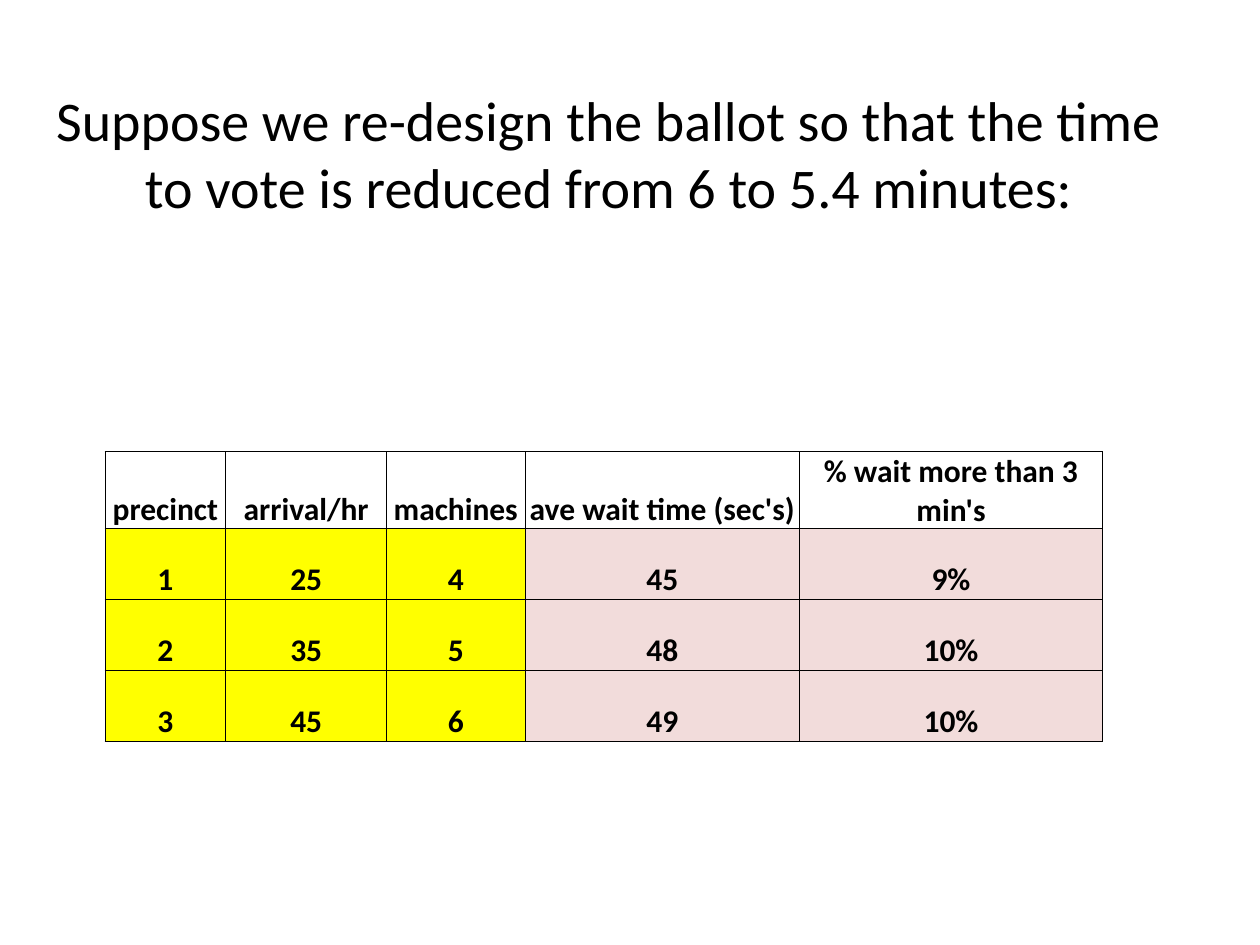
from lxml import etree
from pptx import Presentation
from pptx.dml.color import RGBColor
from pptx.enum import text
from pptx.oxml import ns
from pptx.util import Pt

TITLE = "Suppose we re-design the ballot so that the time to vote is reduced from 6 to 5.4 minutes:"
HEADERS = ["precinct", "arrival/hr", "machines", "ave wait time (sec's)", "% wait more than 3 min's"]
PRECINCTS = [
    ["1", "25", "4", "45", "9%"],
    ["2", "35", "5", "48", "10%"],
    ["3", "45", "6", "49", "10%"],
]
INPUT_COLUMNS = 3
COLUMN_WIDTHS = [69, 92, 79, 157, 173]
ROW_HEIGHT = 40.5
COLORS = {"ink": "000000", "input": "FFFF00", "result": "F2DCDB"}
FONT = "Calibri"


def write(frame, words, size, bold=False):
    para = frame.paragraphs[0]
    para.alignment = text.PP_ALIGN.CENTER
    span = para.add_run()
    span.text = words
    span.font.name = FONT
    span.font.size = Pt(size)
    span.font.bold = bold
    span.font.color.rgb = RGBColor.from_string(COLORS["ink"])


def add_borders(cell, width=0.5):
    properties = cell._tc.get_or_add_tcPr()
    for side in ("a:lnL", "a:lnR", "a:lnT", "a:lnB"):
        line = etree.SubElement(properties, ns.qn(side), w=str(Pt(width)))
        fill = etree.SubElement(line, ns.qn("a:solidFill"))
        etree.SubElement(fill, ns.qn("a:srgbClr"), val=COLORS["ink"])


def style_cell(cell, fill_color):
    cell.vertical_anchor = text.MSO_ANCHOR.BOTTOM
    cell.margin_left = cell.margin_right = cell.margin_top = Pt(0.75)
    cell.margin_bottom = 0
    add_borders(cell)
    if fill_color:
        cell.fill.solid()
        cell.fill.fore_color.rgb = RGBColor.from_string(fill_color)
    else:
        cell.fill.background()


deck = Presentation()
deck.slide_width, deck.slide_height = Pt(720), Pt(540)
page = deck.slides.add_slide(deck.slide_layouts[6])

title = page.shapes.add_textbox(Pt(24), Pt(42), Pt(648), Pt(90))
title.text_frame.word_wrap = True
title.text_frame.vertical_anchor = text.MSO_ANCHOR.MIDDLE
write(title.text_frame, TITLE, 32)

rows = [HEADERS] + PRECINCTS
table = page.shapes.add_table(
    len(rows), len(HEADERS), Pt(60), Pt(258),
    Pt(sum(COLUMN_WIDTHS)), Pt(ROW_HEIGHT * len(rows)),
).table
table.first_row = table.horz_banding = False
for column, width in zip(table.columns, COLUMN_WIDTHS):
    column.width = Pt(width)
for r, values in enumerate(rows):
    table.rows[r].height = Pt(ROW_HEIGHT)
    for c, value in enumerate(values):
        cell = table.cell(r, c)
        body_color = COLORS["input" if c < INPUT_COLUMNS else "result"]
        style_cell(cell, body_color if r else None)
        write(cell.text_frame, value, 18, bold=True)

deck.save("out.pptx")
